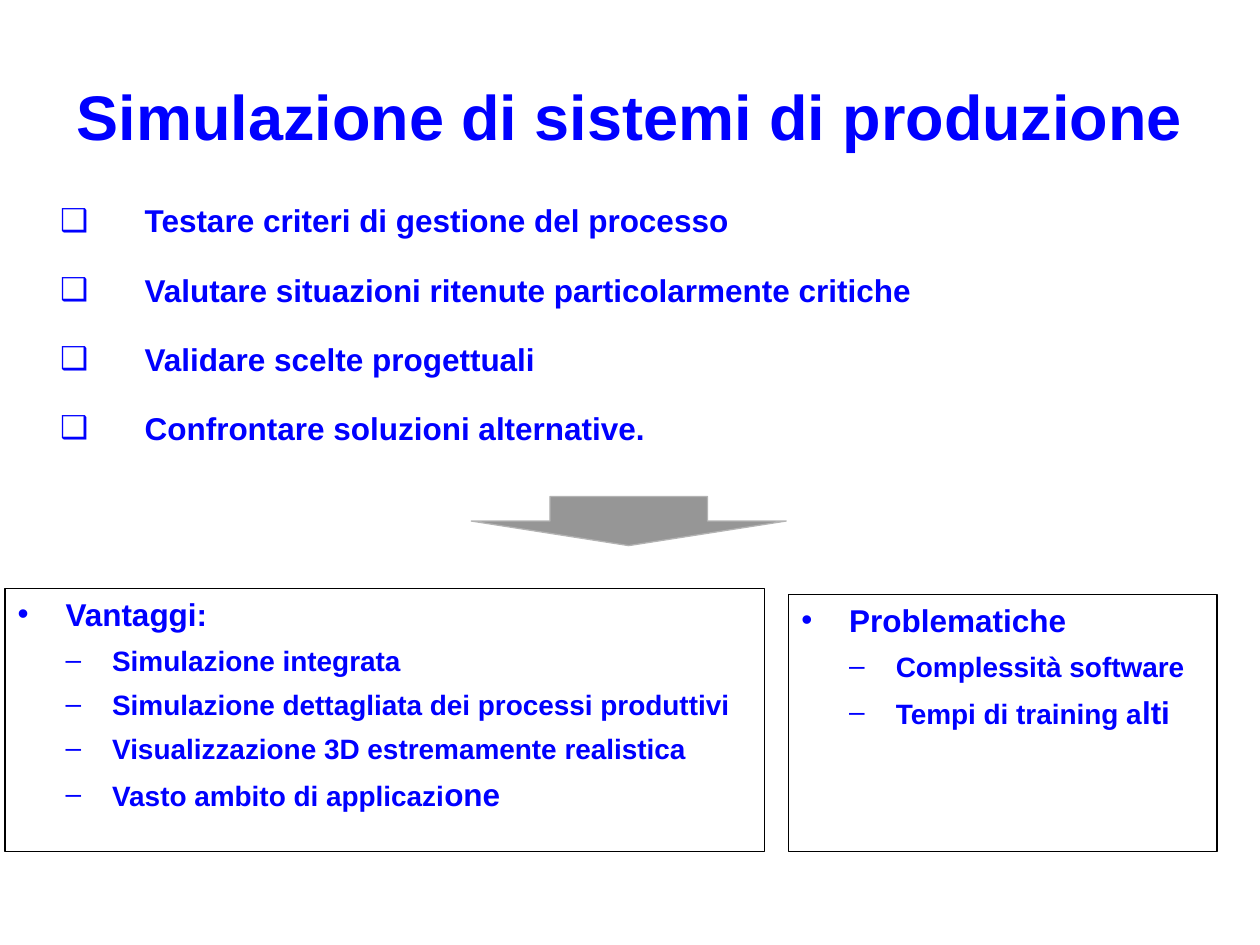
from lxml import etree
from pptx import Presentation
from pptx.dml.color import RGBColor
from pptx.enum import shapes, text
from pptx.oxml.ns import qn
from pptx.util import Inches, Pt

COLORS = {"text": "0000FF", "frame": "000000", "arrow": "969696", "arrow_edge": "B3B3B3"}
FONT = "Arial"

GOALS = [
    "Testare criteri di gestione del processo",
    "Valutare situazioni ritenute particolarmente critiche",
    "Validare scelte progettuali",
    "Confrontare soluzioni alternative.",
]
# Each panel item is a list of (wording, size) spans
ADVANTAGES = [
    [("Simulazione integrata", 16)],
    [("Simulazione dettagliata dei processi produttivi", 16)],
    [("Visualizzazione 3D estremamente realistica", 16)],
    [("Vasto ambito di applicazi", 16), ("one", 18)],
]
PROBLEMS = [
    [("Complessità software", 16)],
    [("Tempi di training a", 16), ("lti", 18)],
]


def color(name):
    return RGBColor.from_string(COLORS[name])


def place(shape, box):
    shape.left, shape.top, shape.width, shape.height = map(Inches, box)


def set_line(shape, name):
    shape.line.color.rgb = color(name)
    shape.line.width = Pt(0.75)


def style_span(span, size):
    span.font.name = FONT
    span.font.size = Pt(size)
    span.font.bold = True
    span.font.color.rgb = color("text")


def set_bullet(para, char, margin, hanging):
    props = para._p.get_or_add_pPr()
    props.set("marL", str(Inches(margin)))
    props.set("indent", str(-Inches(hanging)))
    etree.SubElement(props, qn("a:buFont")).set("typeface", FONT)
    etree.SubElement(props, qn("a:buChar")).set("char", char)


def add_para(frame, first, spans, space, bullet, spacing=None):
    para = frame.paragraphs[0] if first else frame.add_paragraph()
    para.space_before = Pt(space)
    if spacing:
        para.line_spacing = spacing
    set_bullet(para, *bullet)
    for wording, size in spans:
        span = para.add_run()
        span.text = wording
        style_span(span, size)
    return para


def fill_title(title, box):
    place(title, box)
    frame = title.text_frame
    frame.text = "Simulazione di sistemi di produzione"
    frame.auto_size = text.MSO_AUTO_SIZE.NONE
    frame.vertical_anchor = text.MSO_ANCHOR.MIDDLE
    para = frame.paragraphs[0]
    para.alignment = text.PP_ALIGN.CENTER
    style_span(para.runs[0], 36)


def add_goals(page, box):
    frame = page.shapes.add_textbox(*map(Inches, box)).text_frame
    frame.word_wrap = True
    for index, goal in enumerate(GOALS):
        add_para(frame, index == 0, [(goal, 18)], 5, ("❑", 0.67, 0.67), 1.6)


def add_arrow(page, box):
    arrow = page.shapes.add_shape(shapes.MSO_SHAPE.DOWN_ARROW, *map(Inches, box))
    arrow.shadow.inherit = False
    arrow.fill.solid()
    arrow.fill.fore_color.rgb = color("arrow")
    set_line(arrow, "arrow_edge")


def fill_panel(panel, box, heading, items):
    place(panel, box)
    set_line(panel, "frame")
    frame = panel.text_frame
    frame.auto_size = text.MSO_AUTO_SIZE.NONE
    add_para(frame, True, [(heading, 18)], 22, ("•", 0.38, 0.38))
    for spans in items:
        add_para(frame, False, spans, 6, ("–", 0.75, 0.37)).level = 1


def main():
    deck = Presentation()
    deck.slide_width, deck.slide_height = Inches(10), Inches(7.5)
    page = deck.slides.add_slide(deck.slide_layouts.get_by_name("Two Content"))
    title, left_panel, right_panel = list(page.placeholders)

    # Title and goals
    fill_title(title, (0.43, 0.5, 9.14, 0.83))
    add_goals(page, (0.38, 1.37, 9.3, 2.34))

    # Arrow leading to the two framed panels
    add_arrow(page, (3.74, 3.94, 2.5, 0.39))
    fill_panel(left_panel, (0.04, 4.67, 6.03, 2.09), "Vantaggi:", ADVANTAGES)
    fill_panel(right_panel, (6.26, 4.72, 3.4, 2.04), "Problematiche", PROBLEMS)

    deck.save("out.pptx")


if __name__ == "__main__":
    main()
